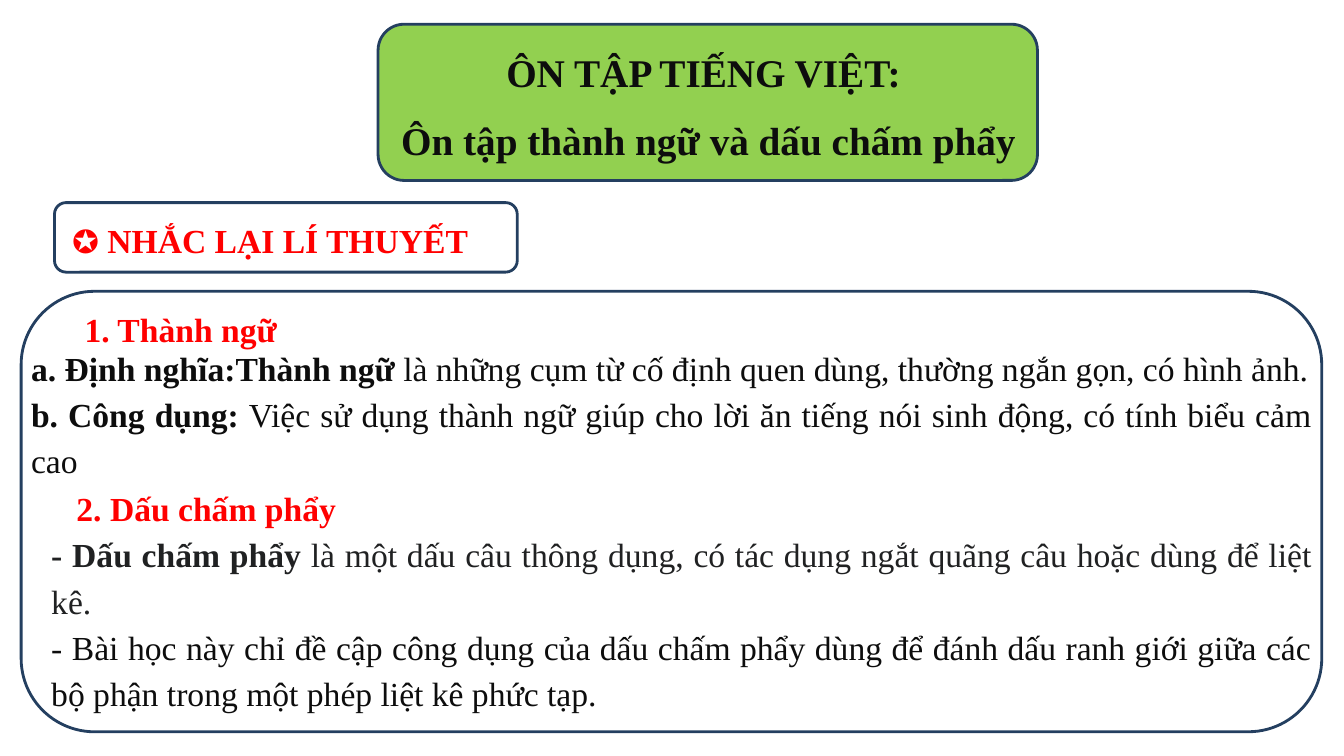
import pptx
import pptx.util
import pptx.dml.color
import pptx.enum.shapes
import pptx.enum.text

Inches = pptx.util.Inches
Align = pptx.enum.text.PP_ALIGN
RGBColor = pptx.dml.color.RGBColor

GREEN = RGBColor(0x92, 0xD0, 0x50)
NAVY = RGBColor(0x24, 0x3F, 0x60)
RED = RGBColor(0xFF, 0x00, 0x00)
INK = RGBColor(0x0D, 0x0D, 0x0D)
GRAPHITE = RGBColor(0x20, 0x21, 0x22)

FONT = "Times New Roman"
WIDTH, HEIGHT = 13.33, 7.5
LINE_SPACING = 1.15
PARAGRAPH_GAP = 10
HEADING_INDENT = 0.25

# Frames: left, top, width, height, fill
FRAMES = [
    (3.75, 0.24, 6.54, 1.55, GREEN),
    (0.21, 2.89, 12.9, 4.37, None),
    (0.54, 2.01, 4.59, 0.69, None),
]

# Paragraphs: (runs of (text, colour, bold), space after, first-line indent)
TITLE_BOX = (3.69, 0.36, 6.67, 1.29)
TITLE = [
    ([("ÔN TẬP TIẾNG VIỆT: ", INK, True)], PARAGRAPH_GAP, 0),
    ([("Ôn tập thành ngữ và dấu chấm phẩy", INK, True)], PARAGRAPH_GAP, 0),
]
TEXTS = [
    ((0.62, 2.07, 6.67, 0.54), [
        ([("✪ ", RED, False), ("NHẮC LẠI LÍ THUYẾT ", RED, True)], PARAGRAPH_GAP, 0),
    ]),
    ((0.74, 2.96, 6.74, 0.53), [
        ([("1. Thành ngữ", RED, True)], 0, 0),
    ]),
    ((0.21, 3.34, 12.9, 1.47), [
        ([("a. Định nghĩa:Thành ngữ ", INK, True),
          ("là những cụm từ cố định quen dùng, thường ngắn gọn, có hình ảnh.", INK, False)], 0, 0),
        ([("b. Công dụng: ", INK, True),
          ("Việc sử dụng thành ngữ giúp cho lời ăn tiếng nói sinh động, "
           "có tính biểu cảm cao", INK, False)], PARAGRAPH_GAP, 0),
    ]),
    ((0.41, 4.73, 12.7, 2.39), [
        ([("2. Dấu chấm phẩy", RED, True)], 0, HEADING_INDENT),
        ([("- Dấu chấm phẩy ", GRAPHITE, True),
          ("là một dấu câu thông dụng, có tác dụng ngắt quãng câu "
           "hoặc dùng để liệt kê.", GRAPHITE, False)], 0, 0),
        ([("- Bài học này chỉ đề cập công dụng của dấu chấm phẩy dùng để đánh dấu "
           "ranh giới giữa các bộ phận trong một phép liệt kê phức tạp.", INK, False)], 0, 0),
    ]),
]


def apply(target, **values):
    for name, value in values.items():
        setattr(target, name, value)


def write(frame, paragraphs, size, alignment):
    apply(frame, word_wrap=True, vertical_anchor=pptx.enum.text.MSO_ANCHOR.TOP,
          auto_size=pptx.enum.text.MSO_AUTO_SIZE.NONE)
    for index, (runs, gap, indent) in enumerate(paragraphs):
        paragraph = frame.add_paragraph() if index else frame.paragraphs[0]
        apply(paragraph, alignment=alignment, line_spacing=LINE_SPACING,
              space_before=pptx.util.Pt(0), space_after=pptx.util.Pt(gap))
        if indent:
            paragraph._p.get_or_add_pPr().set("indent", str(int(Inches(indent))))
        for text, colour, bold in runs:
            run = paragraph.add_run()
            run.text = text
            apply(run.font, name=FONT, size=pptx.util.Pt(size), bold=bold)
            run.font.color.rgb = colour


def main():
    presentation = pptx.Presentation()
    apply(presentation, slide_width=Inches(WIDTH), slide_height=Inches(HEIGHT))
    slide = presentation.slides.add_slide(presentation.slide_layouts[5])

    # Rounded frames
    for *box, fill in FRAMES:
        shape = slide.shapes.add_shape(
            pptx.enum.shapes.MSO_SHAPE.ROUNDED_RECTANGLE, *map(Inches, box))
        shape.shadow.inherit = False
        if fill is None:
            shape.fill.background()
        else:
            shape.fill.solid()
            shape.fill.fore_color.rgb = fill
        shape.line.color.rgb = NAVY
        shape.line.width = pptx.util.Pt(2)

    # Title, brought in front of its frame
    title = slide.shapes.title
    apply(title, **dict(zip(("left", "top", "width", "height"), map(Inches, TITLE_BOX))))
    title.element.getparent().append(title.element)
    write(title.text_frame, TITLE, 28, Align.CENTER)

    # Theory texts
    for box, paragraphs in TEXTS:
        shape = slide.shapes.add_textbox(*map(Inches, box))
        write(shape.text_frame, paragraphs, 24, Align.JUSTIFY)

    presentation.save("out.pptx")


if __name__ == "__main__":
    main()
